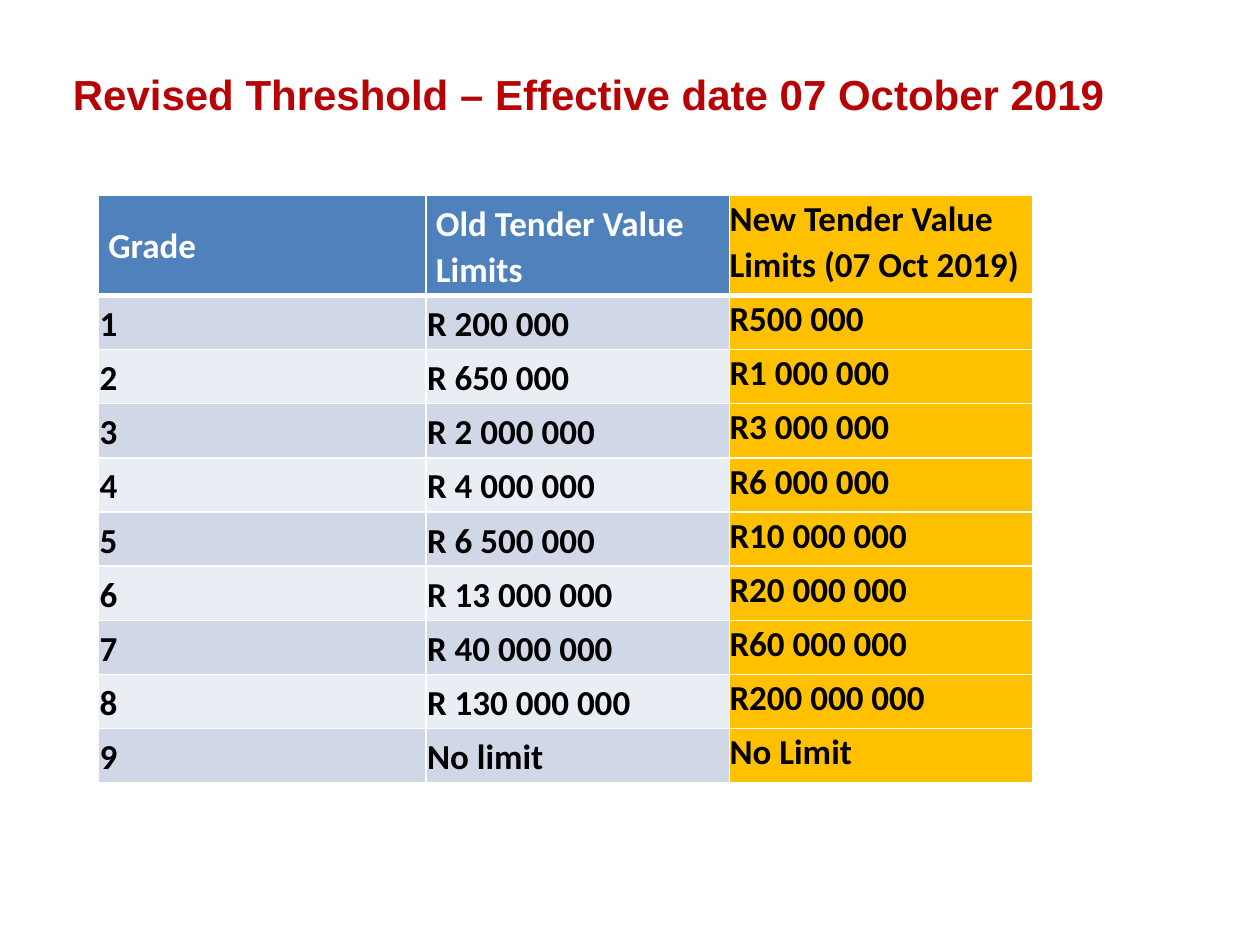
from lxml import etree
from pptx import Presentation
from pptx.dml.color import RGBColor
from pptx.enum.text import MSO_ANCHOR as Anchor, PP_ALIGN as Align
from pptx.oxml.ns import qn
from pptx.util import Inches, Pt

WHITE = RGBColor(0xFF, 0xFF, 0xFF)
BLACK = RGBColor(0x00, 0x00, 0x00)
RED = RGBColor(0xB6, 0x03, 0x05)
BLUE = RGBColor(0x4F, 0x81, 0xBD)
GOLD = RGBColor(0xFF, 0xC0, 0x00)
BANDS = (RGBColor(0xD0, 0xD8, 0xE8), RGBColor(0xE9, 0xED, 0xF4))

HEADINGS = ("Grade", "Old Tender Value Limits", "New Tender Value Limits (07 Oct 2019)")
LIMITS = (
    ("R 200 000", "R500 000"),
    ("R 650 000", "R1 000 000"),
    ("R 2 000 000", "R3 000 000"),
    ("R 4 000 000", "R6 000 000"),
    ("R 6 500 000", "R10 000 000"),
    ("R 13 000 000", "R20 000 000"),
    ("R 40 000 000", "R60 000 000"),
    ("R 130 000 000", "R200 000 000"),
    ("No limit", "No Limit"),
)
COLUMN_WIDTHS = (2.6, 2.41, 2.41)
HEADER_HEIGHT, ROW_HEIGHT = 0.75, 0.43
HEADER_MARGINS = (0.08, 0.04, 0.08, 0.04)
BODY_MARGINS = (0.01, 0.01, 0.01, 0)
NEW_LIMIT_MARGINS = (0, 0, 0, 0)
SIDES = ("left", "top", "right", "bottom")


def apply(target, values):
    for name, value in values.items():
        setattr(target, name, value)


class SlideBuilder:
    title_font = {"name": "Arial", "size": Pt(24), "bold": True}
    table_font = {"name": "Calibri", "size": Pt(20), "bold": True}
    table_para = {"line_spacing": 1.07, "space_after": Pt(8), "alignment": Align.LEFT}

    def __init__(self, deck):
        self.page = deck.slides.add_slide(deck.slide_layouts[6])

    def add_text(self, para, text, font, color):
        span = para.add_run()
        span.text = text
        apply(span.font, font)
        span.font.color.rgb = color

    def title(self, text, left, top, width, height):
        box = self.page.shapes.add_textbox(*map(Inches, (left, top, width, height)))
        frame = box.text_frame
        apply(frame, {"word_wrap": True, "vertical_anchor": Anchor.MIDDLE})
        self.add_text(frame.paragraphs[0], text, self.title_font, RED)

    def border(self, cell, side, points):
        line = etree.SubElement(cell._tc.get_or_add_tcPr(), qn(f"a:ln{side}"), w=str(Pt(points)))
        fill = etree.SubElement(line, qn("a:solidFill"))
        etree.SubElement(fill, qn("a:srgbClr"), val=str(WHITE))

    def cell(self, cell, text, row, column):
        """Style a cell by its place: header, banded body or highlighted new limit."""
        is_header, is_new = row == 0, column == len(HEADINGS) - 1
        if is_new:
            fill, color, margins = GOLD, BLACK, NEW_LIMIT_MARGINS
        elif is_header:
            fill, color, margins = BLUE, WHITE, HEADER_MARGINS
        else:
            fill, color, margins = BANDS[(row - 1) % 2], BLACK, BODY_MARGINS

        for side in "LRTB":
            thick = (side == "B" and is_header) or (side == "T" and row == 1)
            self.border(cell, side, 3 if thick else 1)
        cell.fill.solid()
        cell.fill.fore_color.rgb = fill
        cell.vertical_anchor = Anchor.TOP if is_new else Anchor.MIDDLE
        apply(cell, {f"margin_{side}": Inches(gap) for side, gap in zip(SIDES, margins)})
        para = cell.text_frame.paragraphs[0]
        apply(para, self.table_para)
        self.add_text(para, text, self.table_font, color)

    def table(self, rows, left, top):
        heights = [HEADER_HEIGHT] + [ROW_HEIGHT] * (len(rows) - 1)
        size = (sum(COLUMN_WIDTHS), sum(heights))
        table = self.page.shapes.add_table(
            len(rows), len(COLUMN_WIDTHS), *map(Inches, (left, top, *size))
        ).table
        for column, width in zip(table.columns, COLUMN_WIDTHS):
            column.width = Inches(width)
        for row, height in zip(table.rows, heights):
            row.height = Inches(height)
        for r, texts in enumerate(rows):
            for c, text in enumerate(texts):
                self.cell(table.cell(r, c), text, r, c)


def main():
    deck = Presentation()
    apply(deck, {"slide_width": Inches(10), "slide_height": Inches(7.5)})
    builder = SlideBuilder(deck)
    builder.title("Revised Threshold – Effective date 07 October 2019", 0.48, 0.12, 9, 1.25)
    grades = [(str(grade), *limits) for grade, limits in enumerate(LIMITS, start=1)]
    builder.table([HEADINGS, *grades], 0.78, 1.55)
    deck.save("out.pptx")


if __name__ == "__main__":
    main()
